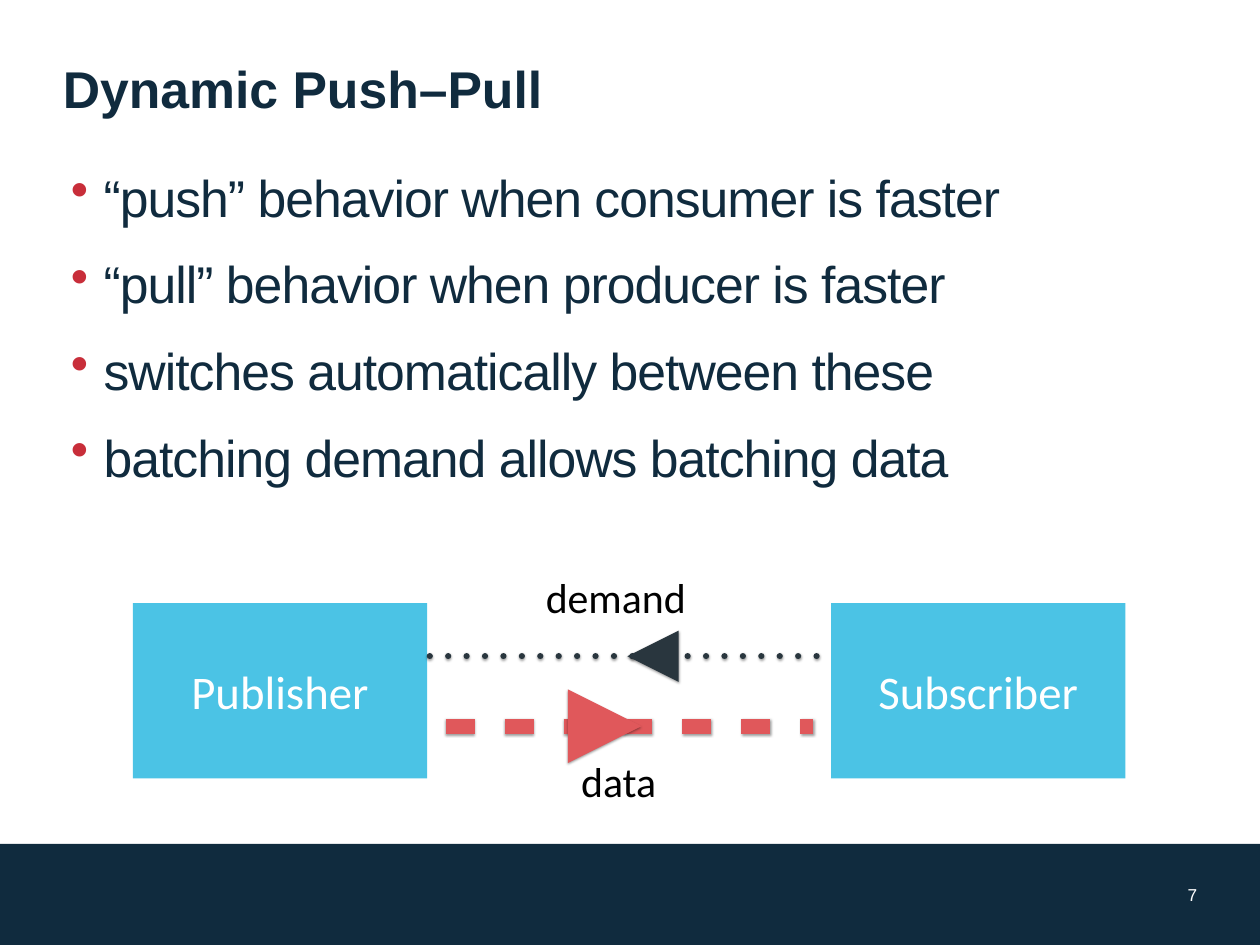
"""Build the slide on dynamic push–pull between publisher and subscriber."""
from lxml import etree
from pptx import Presentation
from pptx.dml.color import RGBColor
from pptx.enum.shapes import MSO_CONNECTOR, MSO_SHAPE
from pptx.enum.text import MSO_ANCHOR, PP_ALIGN
from pptx.oxml.ns import qn
from pptx.util import Inches, Pt

RECTANGLE = MSO_SHAPE.RECTANGLE
STRAIGHT = MSO_CONNECTOR.STRAIGHT
TOP, MIDDLE = MSO_ANCHOR.TOP, MSO_ANCHOR.MIDDLE
LEFT, CENTER, RIGHT = PP_ALIGN.LEFT, PP_ALIGN.CENTER, PP_ALIGN.RIGHT

COLORS = {
    "navy": "102B3E", "bullet": "C82E3A", "box": "4BC3E5", "demand": "29363E",
    "data": "E0585B", "white": "FFFFFF", "black": "000000",
}
SLIDE_WIDTH, SLIDE_HEIGHT = 14.22, 10.67
FOOTER_TOP = 9.53
MARGIN, CONTENT_WIDTH = 0.71, 12.8

TITLE = "Dynamic Push–Pull"
BULLETS = [
    "“push” behavior when consumer is faster",
    "“pull” behavior when producer is faster",
    "switches automatically between these",
    "batching demand allows batching data",
]
PAGE_NUMBER = "7"
ROLES = [("Publisher", 1.5), ("Subscriber", 9.38)]
ROLE_TOP, ROLE_WIDTH, ROLE_HEIGHT = 6.81, 3.32, 1.98
FLOWS = [
    {"color": "data", "start": 5.03, "end": 9.18, "y": 8.2, "weight": 12,
     "cap": "flat", "dash": 200000, "tip": 7.24, "base": 6.41,
     "label": "data", "label_box": (6.56, 8.53, 1, 0.71)},
    {"color": "demand", "start": 4.85, "end": 9.27, "y": 7.41, "weight": 5,
     "cap": "rnd", "dash": 100000, "tip": 7.08, "base": 7.66,
     "label": "demand", "label_box": (6.16, 6.45, 1.74, 0.71)},
]


def color(name):
    return RGBColor.from_string(COLORS[name])


def add_run(paragraph, text, size, font, color_name, bold=False):
    run = paragraph.add_run()
    run.text = text
    run.font.size = Pt(size)
    run.font.name = font
    run.font.bold = bold
    run.font.color.rgb = color(color_name)
    return run


def prepare_frame(shape, anchor, wrap=True):
    frame = shape.text_frame
    frame.margin_left = frame.margin_right = 0
    frame.margin_top = frame.margin_bottom = 0
    frame.vertical_anchor = anchor
    frame.word_wrap = wrap
    return frame


def add_text_box(slide, box, anchor, wrap=True):
    return prepare_frame(slide.shapes.add_textbox(*map(Inches, box)), anchor, wrap)


def add_rectangle(slide, box, color_name):
    shape = slide.shapes.add_shape(RECTANGLE, *map(Inches, box))
    shape.shadow.inherit = False
    shape.fill.solid()
    shape.fill.fore_color.rgb = color(color_name)
    shape.line.fill.background()
    return shape


def add_shadow(shape):
    effects = etree.SubElement(shape._element.spPr, qn("a:effectLst"))
    shadow = etree.SubElement(effects, qn("a:outerShdw"), blurRad=str(Pt(2)),
                              dist=str(Pt(1)), dir="5400000", rotWithShape="0")
    tint = etree.SubElement(shadow, qn("a:srgbClr"), val=COLORS["black"])
    etree.SubElement(tint, qn("a:alpha"), val="38000")


def add_bullet(paragraph, text):
    properties = paragraph._p.get_or_add_pPr()
    properties.set("marL", str(Inches(0.46)))
    properties.set("indent", str(Inches(-0.37)))
    bullet_color = etree.SubElement(properties, qn("a:buClr"))
    etree.SubElement(bullet_color, qn("a:srgbClr"), val=COLORS["bullet"])
    etree.SubElement(properties, qn("a:buChar"), char="•")
    run = add_run(paragraph, text, 42, "Arial", "navy")
    run._r.get_or_add_rPr().set("spc", "-80")


def add_flow_line(slide, flow):
    y = Inches(flow["y"])
    connector = slide.shapes.add_connector(
        STRAIGHT, Inches(flow["start"]), y, Inches(flow["end"]), y)
    connector.line.color.rgb = color(flow["color"])
    connector.line.width = Pt(flow["weight"])
    line = connector.line._get_or_add_ln()
    line.set("cap", flow["cap"])
    dashes = etree.SubElement(line, qn("a:custDash"))
    etree.SubElement(dashes, qn("a:ds"), d=str(flow["dash"]), sp="200000")
    add_shadow(connector)


def add_flow_head(slide, flow):
    tip, base, y = flow["tip"], flow["base"], flow["y"]
    half = abs(tip - base) / 2
    builder = slide.shapes.build_freeform(Inches(tip), Inches(y))
    builder.add_line_segments(
        [(Inches(base), Inches(y - half)), (Inches(base), Inches(y + half))])
    head = builder.convert_to_shape()
    head.fill.solid()
    head.fill.fore_color.rgb = color(flow["color"])
    head.line.fill.background()
    add_shadow(head)


def main():
    presentation = Presentation()
    presentation.slide_width = Inches(SLIDE_WIDTH)
    presentation.slide_height = Inches(SLIDE_HEIGHT)
    slide = presentation.slides.add_slide(presentation.slide_layouts[6])

    add_rectangle(
        slide, (0, FOOTER_TOP, SLIDE_WIDTH, SLIDE_HEIGHT - FOOTER_TOP), "navy")
    title = add_text_box(slide, (MARGIN, 0.12, CONTENT_WIDTH, 1.74), MIDDLE)
    add_run(title.paragraphs[0], TITLE, 42, "Arial", "navy", bold=True)

    body = add_text_box(slide, (MARGIN, 1.87, CONTENT_WIDTH, 7.5), TOP)
    for index, text in enumerate(BULLETS):
        paragraph = body.add_paragraph() if index else body.paragraphs[0]
        add_bullet(paragraph, text)
        if index:
            paragraph.space_before = Pt(20)

    number = add_text_box(slide, (10.19, 9.91, 3.32, 0.38), MIDDLE)
    number.paragraphs[0].alignment = RIGHT
    add_run(number.paragraphs[0], PAGE_NUMBER, 14, "Arial", "white")

    for name, left in ROLES:
        box = add_rectangle(slide, (left, ROLE_TOP, ROLE_WIDTH, ROLE_HEIGHT), "box")
        paragraph = prepare_frame(box, MIDDLE).paragraphs[0]
        paragraph.alignment = CENTER
        add_run(paragraph, name, 38, "Calibri", "white")

    for flow in FLOWS:
        add_flow_line(slide, flow)
        add_flow_head(slide, flow)
        label = add_text_box(slide, flow["label_box"], TOP, wrap=False)
        label.paragraphs[0].alignment = LEFT
        add_run(label.paragraphs[0], flow["label"], 34, "Calibri", "black")

    presentation.save("out.pptx")


if __name__ == "__main__":
    main()
